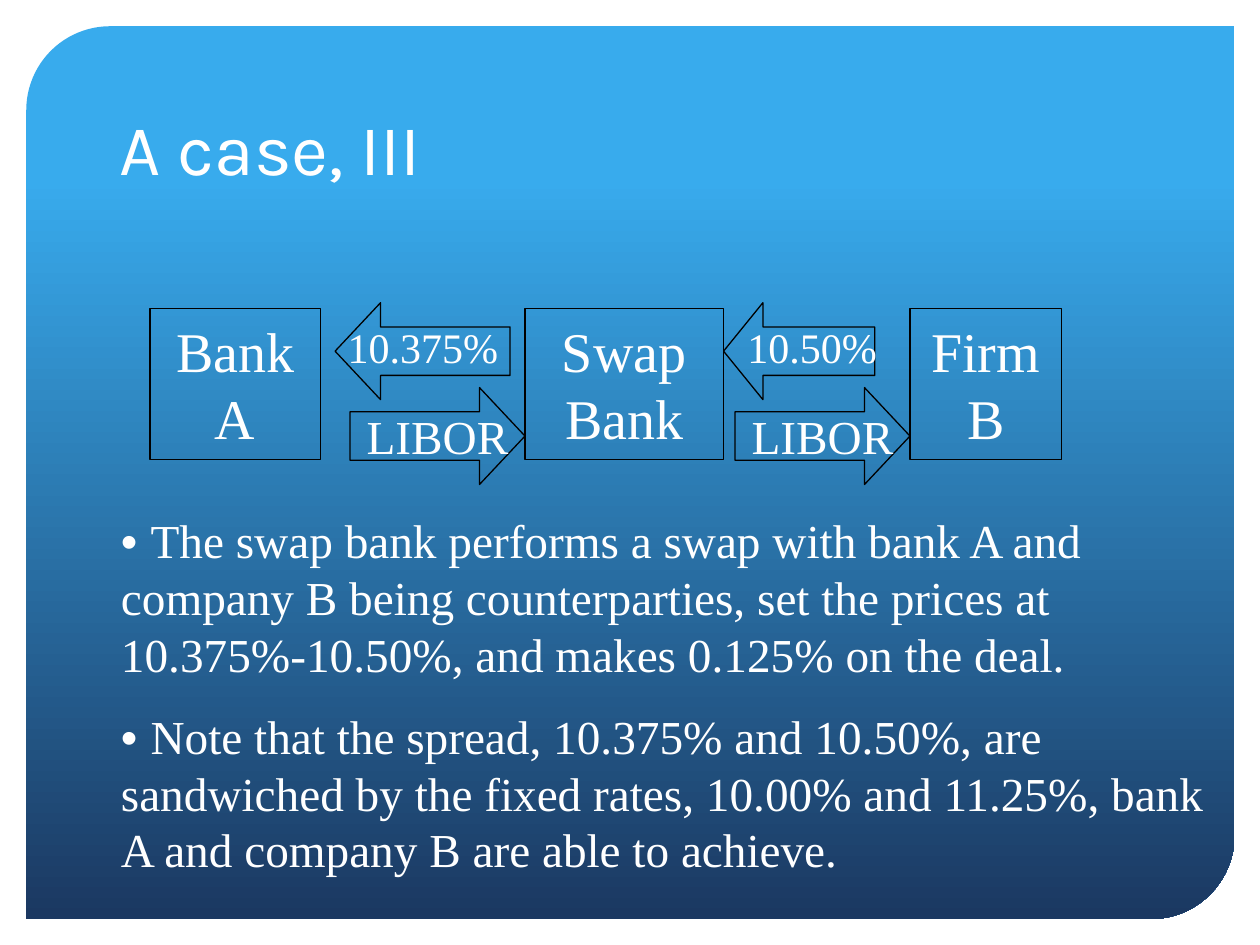
from lxml import etree
from pptx import Presentation
from pptx import util as u
from pptx.dml.color import RGBColor
from pptx.enum import shapes, text
from pptx.oxml.ns import qn

SERIF = "Times New Roman"
WHITE = "FFFFFF"
BLACK = "000000"
POINTS = [
    "The swap bank performs a swap with bank A and company B being counterparties, "
    "set the prices at 10.375%-10.50%, and makes 0.125% on the deal.",
    "Note that the spread, 10.375% and 10.50%, are sandwiched by the fixed rates, "
    "10.00% and 11.25%, bank A and company B are able to achieve.",
]


def color(value):
    return RGBColor.from_string(value)


def box(left, top, width, height):
    return [u.Pt(value) for value in (left, top, width, height)]


def place(shape, bounds):
    shape.left, shape.top, shape.width, shape.height = bounds


def style_paragraph(paragraph, size, font=SERIF, align=text.PP_ALIGN.LEFT):
    paragraph.alignment = align
    paragraph.line_spacing = 1.0
    paragraph.space_before = u.Pt(0)
    for run in paragraph.runs:
        run.font.name = font
        run.font.size = u.Pt(size)
        run.font.color.rgb = color(WHITE)


def style_frame(text_frame, anchor=text.MSO_ANCHOR.TOP, side=7.92, edge=4.32):
    text_frame.word_wrap = True
    text_frame.auto_size = text.MSO_AUTO_SIZE.NONE
    text_frame.vertical_anchor = anchor
    text_frame.margin_left = text_frame.margin_right = u.Pt(side)
    text_frame.margin_top = text_frame.margin_bottom = u.Pt(edge)


def add_background(slide):
    shape = slide.shapes.add_shape(
        shapes.MSO_SHAPE.ROUND_2_DIAG_RECTANGLE, *box(15, 15, 690.5, 510.2))
    shape.shadow.inherit = False
    shape.adjustments[0] = 0.094
    shape.adjustments[1] = 0
    shape.line.fill.background()
    shape.fill.gradient()
    shape.fill.gradient_angle = 270
    stops = [(0.17, "38ABED"), (1, "1B3861")]
    for stop, (position, value) in zip(shape.fill.gradient_stops, stops):
        stop.position = position
        stop.color.rgb = color(value)
    slide.shapes.element.insert(2, shape.element)


def add_outline(slide, kind, bounds):
    shape = slide.shapes.add_shape(kind, *bounds)
    shape.shadow.inherit = False
    shape.fill.background()
    shape.line.color.rgb = color(BLACK)
    shape.line.width = u.Pt(0.75)
    return shape


def add_party(slide, name, left, width):
    shape = add_outline(slide, shapes.MSO_SHAPE.RECTANGLE, box(left, 176.4, width, 86.4))
    style_frame(shape.text_frame)
    shape.text_frame.text = name
    style_paragraph(shape.text_frame.paragraphs[0], 32, align=text.PP_ALIGN.CENTER)


def add_arrow(slide, kind, left, top, width, head):
    arrow = add_outline(slide, kind, box(left, top, width, 55.4))
    arrow.adjustments[0] = 0.5
    arrow.adjustments[1] = head


def add_label(slide, wording, bounds, size, align):
    label = slide.shapes.add_textbox(*bounds)
    style_frame(label.text_frame, side=7.2, edge=3.6)
    label.text_frame.text = wording
    style_paragraph(label.text_frame.paragraphs[0], size, align=align)


def add_fixed_leg(slide, rate, left, width, head, label_left):
    add_arrow(slide, shapes.MSO_SHAPE.LEFT_ARROW, left, 173, width, head)
    add_label(slide, rate, box(label_left, 180, 108.7, 36), 24, text.PP_ALIGN.LEFT)


def add_floating_leg(slide, left):
    add_arrow(slide, shapes.MSO_SHAPE.RIGHT_ARROW, left, 221.5, 100, 0.469)
    add_label(slide, "LIBOR", box(left, 229, 100, 41.8), 27, text.PP_ALIGN.CENTER)


def set_title(slide, wording):
    title = slide.shapes.title
    place(title, box(61.2, 30.2, 596.9, 82.1))
    style_frame(title.text_frame, text.MSO_ANCHOR.BOTTOM, 7.2, 3.6)
    title.text_frame.text = wording
    style_paragraph(title.text_frame.paragraphs[0], 41, "Karla")


def add_inline_bullet(paragraph, wording):
    properties = paragraph._p.get_or_add_pPr()
    properties.set("marL", "0")
    properties.set("indent", "0")
    etree.SubElement(properties, qn("a:buNone"))
    for part in ("• ", wording):
        paragraph.add_run().text = part


def set_points(slide, points):
    body = slide.placeholders[1]
    place(body, box(61.2, 288, 646.6, 221))
    text_frame = body.text_frame
    style_frame(text_frame)
    for index, wording in enumerate(points):
        paragraph = text_frame.add_paragraph() if index else text_frame.paragraphs[0]
        add_inline_bullet(paragraph, wording)
        style_paragraph(paragraph, 27)
        paragraph.runs[0].font.name = "Arial"
        paragraph.space_before = u.Pt(14.4 if index else 0)


def main():
    presentation = Presentation()
    presentation.slide_width = u.Pt(720)
    presentation.slide_height = u.Pt(540)
    slide = presentation.slides.add_slide(presentation.slide_layouts[1])
    add_background(slide)
    set_title(slide, "A case, III")
    parties = [("Bank A", 85.7, 97.5), ("Swap Bank", 300, 113.4), ("Firm B", 520, 86.6)]
    for name, left, width in parties:
        add_party(slide, name, left, width)
    add_fixed_leg(slide, "10.375%", 191.5, 100, 0.469, 191.5)
    add_fixed_leg(slide, "10.50%", 413.5, 86.4, 0.406, 420)
    for left in (200, 420):
        add_floating_leg(slide, left)
    set_points(slide, POINTS)
    presentation.save("out.pptx")


if __name__ == "__main__":
    main()
